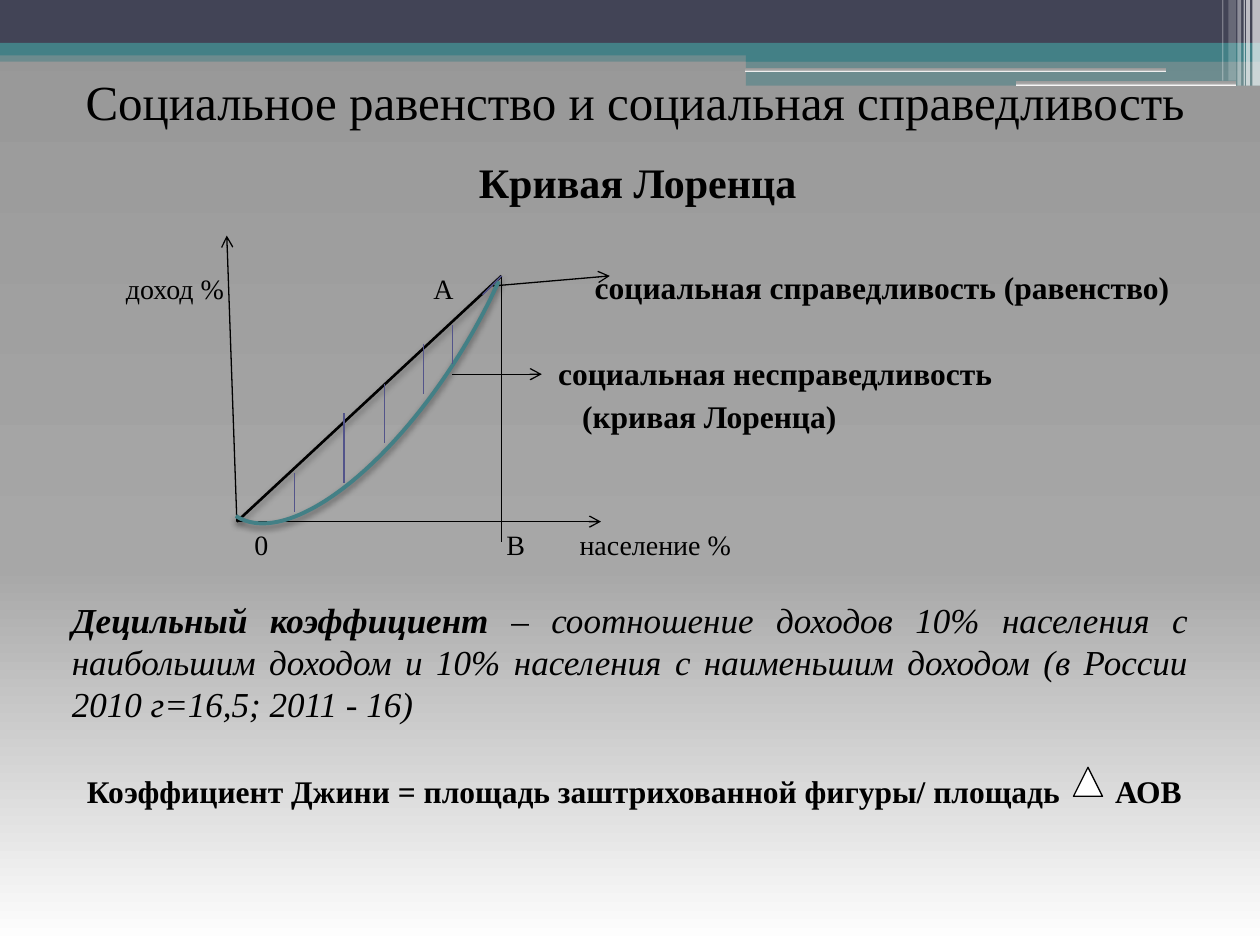
from copy import deepcopy

from lxml import etree
from pptx import Presentation, util as u
from pptx.dml.color import RGBColor
from pptx.enum import shapes, text
from pptx.oxml.ns import qn

BLACK = RGBColor(0x00, 0x00, 0x00)
WHITE = RGBColor(0xFF, 0xFF, 0xFF)
TEAL = RGBColor(0x43, 0x80, 0x86)
NAVY = RGBColor(0x42, 0x44, 0x56)
VIOLET = RGBColor(0x53, 0x54, 0x8A)
GRADIENT = [
    (0, RGBColor(0x97, 0x97, 0x97)),
    (0.6, RGBColor(0xA7, 0xA7, 0xA7)),
    (1, WHITE),
]
FONT = "Times New Roman"
ORIGIN = (1.88, 4.14)
POINT_A = (3.98, 2.19)

BANDS = [
    (0, 0.4, 10, 0.09, TEAL, 50),
    (0, 0, 10, 0.34, NAVY, 100),
    (0, 0.34, 10, 0.1, TEAL, 100),
    (5.92, 0.39, 4.08, 0.1, TEAL, 100),
    (5.92, 0.48, 4.08, 0.2, TEAL, 50),
]
GROOVES = [(5.91, 0.54, 3.35, 0.03), (8.06, 0.64, 1.75, 0.04)]
STRIPES = [
    (9.94, 0, 0.06, 0.68, WHITE, 65),
    (9.89, 0, 0.03, 0.68, WHITE, 65),
    (9.87, 0, 0.01, 0.68, WHITE, 60),
    (9.82, 0, 0.03, 0.68, WHITE, 40),
    (9.75, 0, 0.06, 0.64, WHITE, 20),
    (9.7, 0, 0.01, 0.64, WHITE, 30),
]
HATCHES = [
    ((3.83, 2.34), POINT_A),
    ((3.59, 2.58), (3.59, 2.89)),
    ((3.36, 2.73), (3.36, 3.13)),
    ((3.05, 3.05), (3.05, 3.52)),
    ((2.73, 3.28), (2.73, 3.83)),
    ((2.34, 3.75), (2.34, 4.06)),
]
LABELS = [
    ("доход %", 1, 2.29, 0.9, 16, False),
    ("А", 3.44, 2.29, 0.3, 16, False),
    ("социальная справедливость (равенство)", 4.72, 2.28, 4.8, 18, True),
    ("социальная несправедливость", 4.43, 2.96, 4, 18, True),
    ("(кривая Лоренца)", 4.62, 3.3, 3, 18, True),
    ("0", 2.02, 4.32, 0.3, 16, False),
    ("В", 4.02, 4.32, 0.3, 16, False),
    ("население %", 4.6, 4.32, 1.6, 16, False),
    ("Коэффициент Джини = площадь заштрихованной фигуры/ площадь", 0.69, 6.28, 7.8, 18, True),
    ("АОВ", 8.85, 6.28, 0.7, 18, True),
]


def fill_gradient(fill, element):
    """Apply the three-stop vertical gradient to a fill inside element."""
    fill.gradient()
    fill.gradient_angle = 270
    stops = element.xpath(".//a:gsLst")[0]
    stops.append(deepcopy(stops[-1]))
    for stop, (position, color) in zip(fill.gradient_stops, GRADIENT):
        stop.position = position
        stop.color.rgb = color


def set_effects(shape, shadow_alpha=None):
    """Remove the theme shadow and optionally cast a soft one downwards."""
    properties = shape._element.spPr
    effects = etree.SubElement(properties, qn("a:effectLst"))
    if shadow_alpha:
        shadow = etree.SubElement(
            effects, qn("a:outerShdw"), blurRad=str(u.Pt(4)), dist=str(u.Pt(2)),
            dir="5400000", rotWithShape="0")
        color = etree.SubElement(shadow, qn("a:srgbClr"), val=str(BLACK))
        etree.SubElement(color, qn("a:alpha"), val=str(shadow_alpha * 1000))


def add_shape(slide, kind, left, top, width, height):
    """Add a preset shape placed in inches."""
    return slide.shapes.add_shape(
        kind, u.Inches(left), u.Inches(top), u.Inches(width), u.Inches(height))


def add_bar(slide, left, top, width, height, color, opacity):
    """Add a borderless rectangle with the given opacity in percent."""
    bar = add_shape(slide, shapes.MSO_SHAPE.RECTANGLE, left, top, width, height)
    bar.fill.solid()
    bar.fill.fore_color.rgb = color
    bar.line.fill.background()
    set_effects(bar)
    if opacity < 100:
        color_element = bar._element.xpath("./p:spPr/a:solidFill/a:srgbClr")[0]
        etree.SubElement(color_element, qn("a:alpha"), val=str(opacity * 1000))


def add_groove(slide, *box):
    """Add a thin rounded strip in the background gradient."""
    groove = add_shape(slide, shapes.MSO_SHAPE.ROUNDED_RECTANGLE, *box)
    fill_gradient(groove.fill, groove._element)
    groove.line.fill.background()
    set_effects(groove)


def add_line(slide, start, end, color=BLACK, width=0.75, arrow=False, shadow_alpha=None):
    """Add a straight line, with an open arrowhead at its end if asked."""
    points = [u.Inches(value) for value in (*start, *end)]
    line = slide.shapes.add_connector(shapes.MSO_CONNECTOR.STRAIGHT, *points)
    line.line.color.rgb = color
    line.line.width = u.Pt(width)
    if arrow:
        etree.SubElement(line._element.spPr.find(qn("a:ln")), qn("a:tailEnd"), type="arrow")
    set_effects(line, shadow_alpha)


def add_lorenz_curve(slide):
    """Add the rotated arc below the line of equality."""
    curve = add_shape(slide, shapes.MSO_SHAPE.ARC, 0.89, 1.5, 4.14, 1.67)
    curve.rotation = 121.4
    curve.adjustments[0] = 139.66
    curve.adjustments[1] = 0.2
    curve.fill.background()
    curve.line.color.rgb = TEAL
    curve.line.width = u.Pt(2.25)
    set_effects(curve, 45)


def add_triangle(slide):
    """Add the triangle sign of the Gini formula."""
    triangle = add_shape(slide, shapes.MSO_SHAPE.ISOSCELES_TRIANGLE, 8.52, 6.09, 0.23, 0.23)
    triangle.fill.solid()
    triangle.fill.fore_color.rgb = WHITE
    triangle.line.color.rgb = BLACK
    triangle.line.width = u.Pt(0.75)
    set_effects(triangle)


def add_text(slide, words, left, middle, width, size, bold=False, height=0.4,
             align=text.PP_ALIGN.LEFT):
    """Add a text box centred on a height and return its paragraph."""
    box = slide.shapes.add_textbox(
        u.Inches(left), u.Inches(middle - height / 2), u.Inches(width), u.Inches(height))
    frame = box.text_frame
    frame.word_wrap = True
    frame.vertical_anchor = text.MSO_ANCHOR.MIDDLE
    frame.margin_left = frame.margin_right = frame.margin_top = frame.margin_bottom = 0
    paragraph = frame.paragraphs[0]
    paragraph.alignment = align
    paragraph.font.name = FONT
    paragraph.font.size = u.Pt(size)
    paragraph.font.bold = bold
    paragraph.font.color.rgb = BLACK
    paragraph.add_run().text = words
    return paragraph


def add_definition(slide):
    """Add the justified definition of the decile coefficient."""
    paragraph = add_text(slide, "Децильный коэффициент ", 0.57, 5.25, 8.86, 20,
                         height=1.1, align=text.PP_ALIGN.JUSTIFY)
    paragraph.font.italic = True
    paragraph.line_spacing = u.Pt(24)
    paragraph.runs[0].font.bold = True
    paragraph.add_run().text = (
        "– соотношение доходов 10% населения с наибольшим доходом и 10% населения "
        "с наименьшим доходом (в России 2010 г=16,5; 2011 - 16)")


def add_diagram(slide):
    """Draw the axes, both curves, the hatching and the pointers."""
    add_line(slide, ORIGIN, (1.8, 1.87), arrow=True)
    add_line(slide, ORIGIN, (4.77, 4.14), arrow=True)
    add_line(slide, ORIGIN, POINT_A, width=1.5, shadow_alpha=40)
    add_line(slide, (3.91, 2.27), (4.84, 2.19), arrow=True)
    add_lorenz_curve(slide)
    add_line(slide, (3.59, 2.97), (4.3, 2.97), arrow=True)
    add_line(slide, POINT_A, (3.98, 4.3))
    for start, end in HATCHES:
        add_line(slide, start, end, VIOLET)


def main():
    """Build and save the slide."""
    presentation = Presentation()
    presentation.slide_width = u.Inches(10)
    presentation.slide_height = u.Inches(7.5)
    slide = presentation.slides.add_slide(presentation.slide_layouts[6])
    fill_gradient(slide.background.fill, slide._element)
    for band in BANDS:
        add_bar(slide, *band)
    for groove in GROOVES:
        add_groove(slide, *groove)
    for stripe in STRIPES:
        add_bar(slide, *stripe)
    add_text(slide, "Социальное равенство и социальная справедливость", 0.47, 0.8, 9.14, 28,
             height=0.78, align=text.PP_ALIGN.CENTER)
    add_text(slide, "Кривая Лоренца", 0.6, 1.44, 8.92, 24, True, align=text.PP_ALIGN.CENTER)
    for label in LABELS:
        add_text(slide, *label)
    add_definition(slide)
    add_diagram(slide)
    add_triangle(slide)
    presentation.save("out.pptx")


if __name__ == "__main__":
    main()
